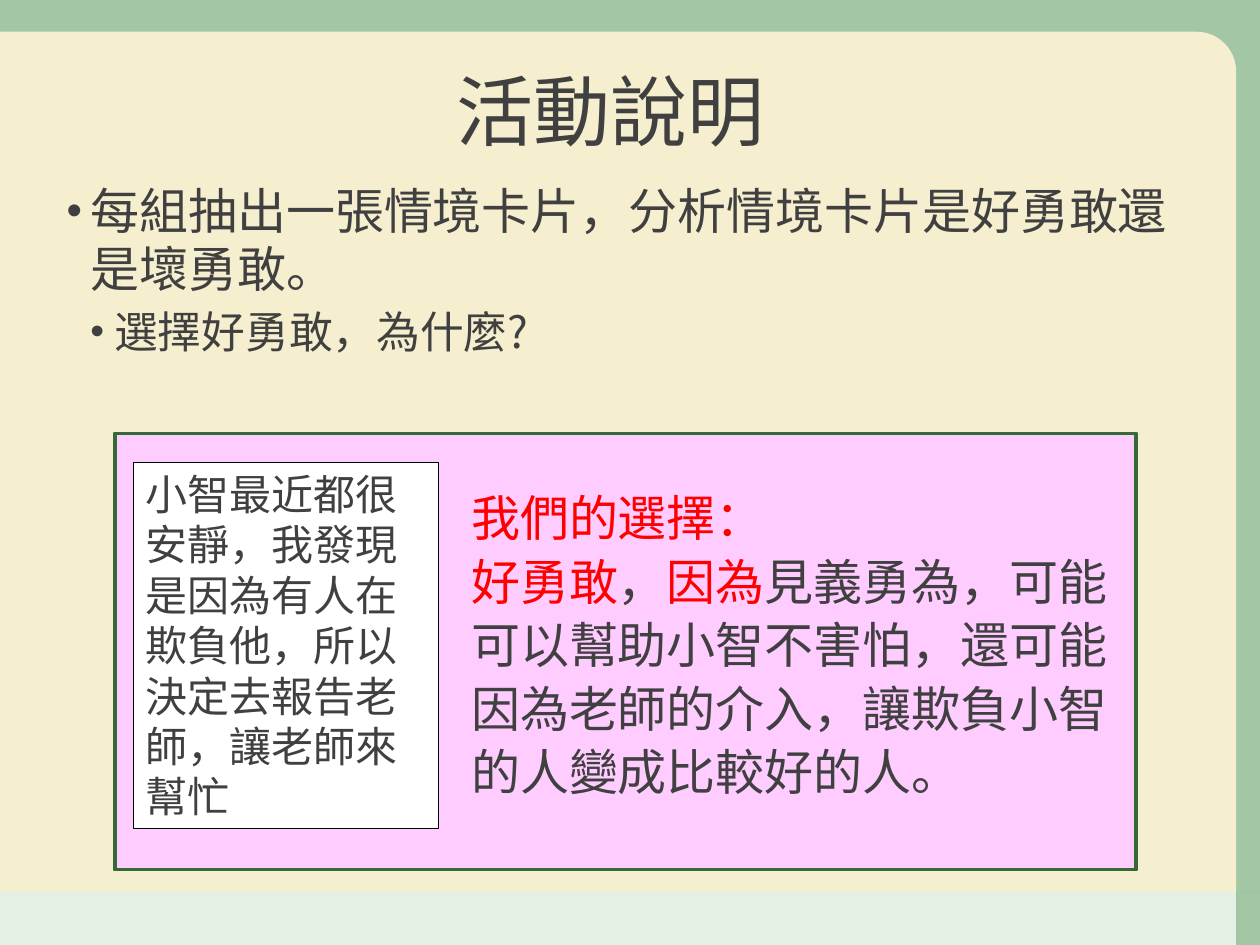
from lxml.etree import SubElement
from pptx import Presentation
from pptx.dml.color import RGBColor
from pptx.enum.shapes import MSO_SHAPE as Shape
from pptx.enum.text import MSO_ANCHOR as Anchor, MSO_AUTO_SIZE as AutoSize, PP_ALIGN as Align
from pptx.oxml.ns import qn
from pptx.util import Cm, Pt

SANS_SC, SANS_TC, SERIF = "Noto Sans CJK SC", "Noto Sans CJK TC", "Times New Roman"
INK, RED, GREEN = "404040", "FF0000", "488E4A"
ANSWER = [
    [("我們的選擇", RED, SERIF), ("：", RED, SANS_TC)],
    [("好勇敢", RED, SERIF), ("，", INK, SERIF), ("因為", RED, SERIF),
     ("見義勇為，可能", INK, SERIF)],
    [("可以幫助小智不害怕，還可能", INK, SERIF)],
    [("因為老師的介入，讓欺負小智", INK, SERIF)],
    [("的人變成比較好的人。", INK, SERIF)],
]


def rgb(value):
    return RGBColor.from_string(value)


def place(shape, left, top, width, height):
    shape.left, shape.top = Cm(left), Cm(top)
    shape.width, shape.height = Cm(width), Cm(height)


def add_block(slide, box, fill, kind=Shape.RECTANGLE, opacity=None, line=None, weight=0.75):
    block = slide.shapes.add_shape(kind, *map(Cm, box))
    block.shadow.inherit = False
    block.fill.solid()
    block.fill.fore_color.rgb = rgb(fill)
    if opacity is not None:
        color = block.fill._xPr.find(qn("a:solidFill"))[0]
        SubElement(color, qn("a:alpha"), val=str(opacity * 1000))
    if line:
        block.line.color.rgb = rgb(line)
        block.line.width = Pt(weight)
    else:
        block.line.fill.background()
    return block


def style(run, size, color=INK, latin=SANS_SC, east_asian=SANS_SC):
    run.font.size = Pt(size)
    run.font.color.rgb = rgb(color)
    run.font.name = latin
    SubElement(run._r.get_or_add_rPr(), qn("a:ea"), typeface=east_asian)


def set_bullet(paragraph, margin, hanging):
    props = paragraph._p.get_or_add_pPr()
    props.set("marL", str(Cm(margin)))
    props.set("indent", str(-Cm(hanging)))
    SubElement(props, qn("a:buSzPct"), val="90000")
    SubElement(props, qn("a:buFont"), typeface="Arial")
    SubElement(props, qn("a:buChar"), char="•")


def add_backdrop(slide, width, height):
    edge, footer = 0.48, 1.07
    page, body = width - edge, height - footer
    add_block(slide, (0, body, page, footer), "D8EBD8", opacity=70)
    add_block(slide, (page, body, edge, footer), GREEN, opacity=50)
    add_block(slide, (0, 0, width, body), GREEN, opacity=50)
    paper = add_block(slide, (0, 0.64, page, body - 0.64), "F5EECF",
                      Shape.ROUND_1_RECTANGLE)
    paper.adjustments[0] = 0.046


def fill_title(title, box):
    place(title, *box)
    frame = title.text_frame
    frame.text = "活動說明"
    frame.auto_size = AutoSize.NONE
    frame.vertical_anchor = Anchor.BOTTOM
    paragraph = frame.paragraphs[0]
    paragraph.alignment = Align.CENTER
    paragraph.line_spacing = 0.9
    style(paragraph.runs[0], 44)


def fill_steps(body, box):
    place(body, *box)
    frame = body.text_frame
    frame.text = "每組抽出一張情境卡片，分析情境卡片是好勇敢還是壞勇敢。\n選擇好勇敢，為什麼?"
    frame.auto_size = AutoSize.NONE
    formats = [(28, 33, 13.5), (25, 30, 4.5)]
    for level, (paragraph, (size, pitch, before)) in enumerate(zip(frame.paragraphs, formats)):
        paragraph.level = level
        paragraph.line_spacing = Pt(pitch)
        paragraph.space_before = Pt(before)
        set_bullet(paragraph, 0.48 * (level + 1), 0.48)
        style(paragraph.runs[0], size)


def add_situation_card(slide, box):
    card = add_block(slide, box, "FFFFFF", line="000000")
    frame = card.text_frame
    frame.word_wrap = True
    frame.vertical_anchor = Anchor.TOP
    frame.text = "小智最近都很安靜，我發現是因為有人在欺負他，所以決定去報告老師，讓老師來幫忙"
    paragraph = frame.paragraphs[0]
    paragraph.alignment = Align.LEFT
    paragraph.line_spacing = Pt(28.8)
    paragraph.space_before = Pt(2.5)
    style(paragraph.runs[0], 24)


def add_answer(slide, box):
    frame = slide.shapes.add_textbox(*map(Cm, box)).text_frame
    frame.word_wrap = True
    for index, parts in enumerate(ANSWER):
        paragraph = frame.add_paragraph() if index else frame.paragraphs[0]
        paragraph.line_spacing = Pt(33.7)
        paragraph.space_before = Pt(2.5)
        for text, color, latin in parts:
            run = paragraph.add_run()
            run.text = text
            style(run, 28, color, latin, SANS_TC)


def add_example(slide, left, top, width, height):
    add_block(slide, (left, top, width, height), "FFCCFF", line="356937", weight=2.25)
    add_situation_card(slide, (left + 0.38, top + 0.58, 6.15, 7.39))
    add_answer(slide, (left + 6.94, top + 0.97, width - 6.94, 6.68))


def main():
    width, height = 25.4, 19.05
    deck = Presentation()
    deck.slide_width, deck.slide_height = Cm(width), Cm(height)
    slide = deck.slides.add_slide(deck.slide_layouts[1])
    title, body = slide.placeholders
    add_backdrop(slide, width, height)
    for placeholder in (title, body):  # bring in front of the backdrop
        slide.shapes._spTree.append(placeholder._element)
    fill_title(title, (2.31, 0, 20.02, 3.3))
    fill_steps(body, (1.09, 3.53, 23.19, 5.21))
    add_example(slide, 2.31, 8.74, 20.6, 8.79)
    deck.save("out.pptx")


if __name__ == "__main__":
    main()
